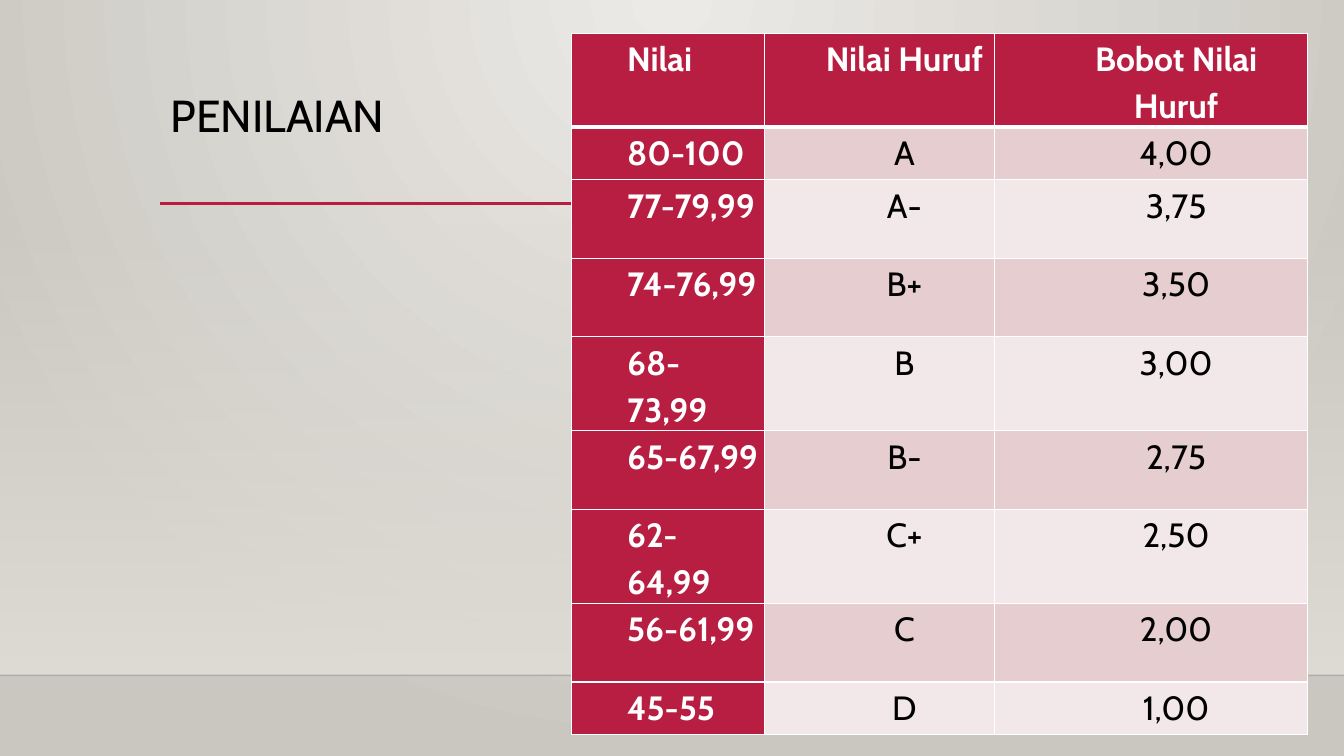
from lxml.etree import SubElement
from pptx import Presentation
from pptx.dml.color import RGBColor as RGB
from pptx.enum.shapes import MSO_CONNECTOR as CONN, MSO_SHAPE as SHAPE
from pptx.enum.text import MSO_ANCHOR as ANCHOR, MSO_AUTO_SIZE as FIT, PP_ALIGN as AL
from pptx.oxml.ns import qn
from pptx.util import Inches, Pt

FONT = "Cabin"
RED, BLACK, WHITE = RGB(0xB7, 0x1E, 0x42), RGB(0, 0, 0), RGB(255, 255, 255)
BANDS = RGB(0xE6, 0xCD, 0xCF), RGB(0xF3, 0xE8, 0xE9)
GLOW, STONE, HAZE = RGB(0xEC, 0xEA, 0xE7), RGB(0xCA, 0xC7, 0xC1), RGB(0xDF, 0xDB, 0xD5)
EDGE = RGB(0, 0, 1)
COLS, ROWS = 133.3, 75  # grid of tenths of an inch

HEADER = ("Nilai", "Nilai Huruf", "Bobot Nilai Huruf")
GRADES = [
    ("80-100", "A", "4,00"), ("77-79,99", "A-", "3,75"),
    ("74-76,99", "B+", "3,50"), ("68-73,99", "B", "3,00"),
    ("65-67,99", "B-", "2,75"), ("62-64,99", "C+", "2,50"),
    ("56-61,99", "C", "2,00"), ("45-55", "D", "1,00"),
]
COL_WIDTHS = (19.1, 22.8, 31.1)
SHORT, TALL = 5.2, 7.8
ROW_HEIGHTS = [SHORT] * 2 + [TALL] * 6 + [SHORT]


def grid(*cells):
    return [Inches(c / 10) for c in cells]


def add_color(parent, color, alpha=100):
    clr = SubElement(parent, qn("a:srgbClr"), val=str(color))
    if alpha < 100:
        SubElement(clr, qn("a:alpha"), val=str(alpha * 1000))


def to_gradient(holder, start, end, start_alpha=100):
    """Turn the solid fill of holder into a two-stop gradient; return it for its direction."""
    solid = holder.find(qn("a:solidFill"))
    grad = holder.makeelement(qn("a:gradFill"), {"rotWithShape": "1"})
    holder.replace(solid, grad)
    stops = SubElement(grad, qn("a:gsLst"))
    for pos, color, alpha in ((0, start, start_alpha), (100000, end, 100)):
        add_color(SubElement(stops, qn("a:gs"), pos=str(pos)), color, alpha)
    return grad


class SlideBuilder:
    def __init__(self, s, font):
        self.s, self.font = s, font

    def background(self, inner, outer):
        self.s.background.fill.solid()
        grad = to_gradient(next(self.s.element.iter(qn("p:bgPr"))), inner, outer)
        circle = SubElement(grad, qn("a:path"), {"path": "circle"})
        SubElement(circle, qn("a:fillToRect"), l="43000", t="0", r="43000", b="100000")

    def fade(self, x, y, w, h, color):
        """Rectangle that fades in downwards."""
        sp = self.s.shapes.add_shape(SHAPE.RECTANGLE, *grid(x, y, w, h))
        sp.shadow.inherit = False
        sp.line.fill.background()
        sp.fill.solid()
        grad = to_gradient(sp.element.spPr, color, color, start_alpha=0)
        SubElement(grad, qn("a:lin"), ang="5400000", scaled="0")

    def rule(self, x1, x2, y, color, width, alpha=100):
        ln = self.s.shapes.add_connector(CONN.STRAIGHT, *grid(x1, y, x2, y))
        ln.line.width = Pt(width)
        ln.line.color.rgb = color
        if alpha < 100:
            clr = next(ln.element.spPr.iter(qn("a:srgbClr")))
            SubElement(clr, qn("a:alpha"), val=str(alpha * 1000))
        SubElement(ln.element.spPr, qn("a:effectLst"))

    def run(self, p, text, size, color, bold=False):
        r = p.add_run()
        r.text = text
        f = r.font
        f.name, f.size, f.bold, f.color.rgb = self.font, Pt(size), bold, color

    def title(self, x, y, w, h, text):
        sp = self.s.shapes.title
        sp.left, sp.top, sp.width, sp.height = grid(x, y, w, h)
        tf = sp.text_frame
        tf.vertical_anchor, tf.auto_size, tf.word_wrap = ANCHOR.TOP, FIT.NONE, True
        p = tf.paragraphs[0]
        p.alignment, p.line_spacing = AL.LEFT, 0.9
        self.run(p, text, 32, BLACK)

    def table(self, x, y, widths, heights, rows):
        size = grid(x, y, sum(widths), sum(heights))
        tbl = self.s.shapes.add_table(len(rows), len(widths), *size).table
        tbl.horz_banding = False
        for col, w in zip(tbl.columns, grid(*widths)):
            col.width = w
        for row, h in zip(tbl.rows, grid(*heights)):
            row.height = h
        for i, row in enumerate(rows):
            for j, text in enumerate(row):
                self.cell(tbl.cell(i, j), i, j, text)

    def cell(self, cell, i, j, text):
        strong = i == 0 or j == 0
        self.borders(cell, top=3 if i == 1 else 1, bottom=3 if i == 0 else 1)
        cell.fill.solid()
        cell.fill.fore_color.rgb = RED if strong else BANDS[(i - 1) % 2]
        cell.margin_left = cell.margin_right = Inches(0.05)
        cell.margin_top = cell.margin_bottom = 0
        p = cell.text_frame.paragraphs[0]
        p.alignment = AL.CENTER if j else AL.JUSTIFY
        p.line_spacing = 1.15
        if j == 2:
            p.space_after = Pt(10)
        pPr = p._p.get_or_add_pPr()
        pPr.set("marL", str(Inches(0.5)))
        pPr.set("indent", "0")
        tabs = SubElement(pPr, qn("a:tabLst"))
        for pos, align in ((3, "ctr"), (6, "r")):
            SubElement(tabs, qn("a:tab"), pos=str(Inches(pos)), algn=align)
        self.run(p, text, 24, WHITE if strong else BLACK, strong)

    def borders(self, cell, top, bottom):
        tcPr = cell._tc.get_or_add_tcPr()
        for side, width in (("L", 1), ("R", 1), ("T", top), ("B", bottom)):
            ln = SubElement(tcPr, qn(f"a:ln{side}"), w=str(Pt(width)))
            add_color(SubElement(ln, qn("a:solidFill")), WHITE)


def main():
    prs = Presentation()
    prs.slide_width, prs.slide_height = grid(COLS, ROWS)
    b = SlideBuilder(prs.slides.add_slide(prs.slide_layouts[5]), FONT)
    b.background(GLOW, STONE)
    b.fade(0, 22.1, COLS, 44.9, HAZE)
    b.rule(0, COLS, 67, EDGE, 1, alpha=20)
    b.rule(15.9, 121, 20.2, RED, 2.5)
    b.title(15.9, 8.8, 105, 11.5, "PENILAIAN")
    b.table(56.7, 3.3, COL_WIDTHS, ROW_HEIGHTS, [HEADER, *GRADES])
    prs.save("out.pptx")


if __name__ == "__main__":
    main()
